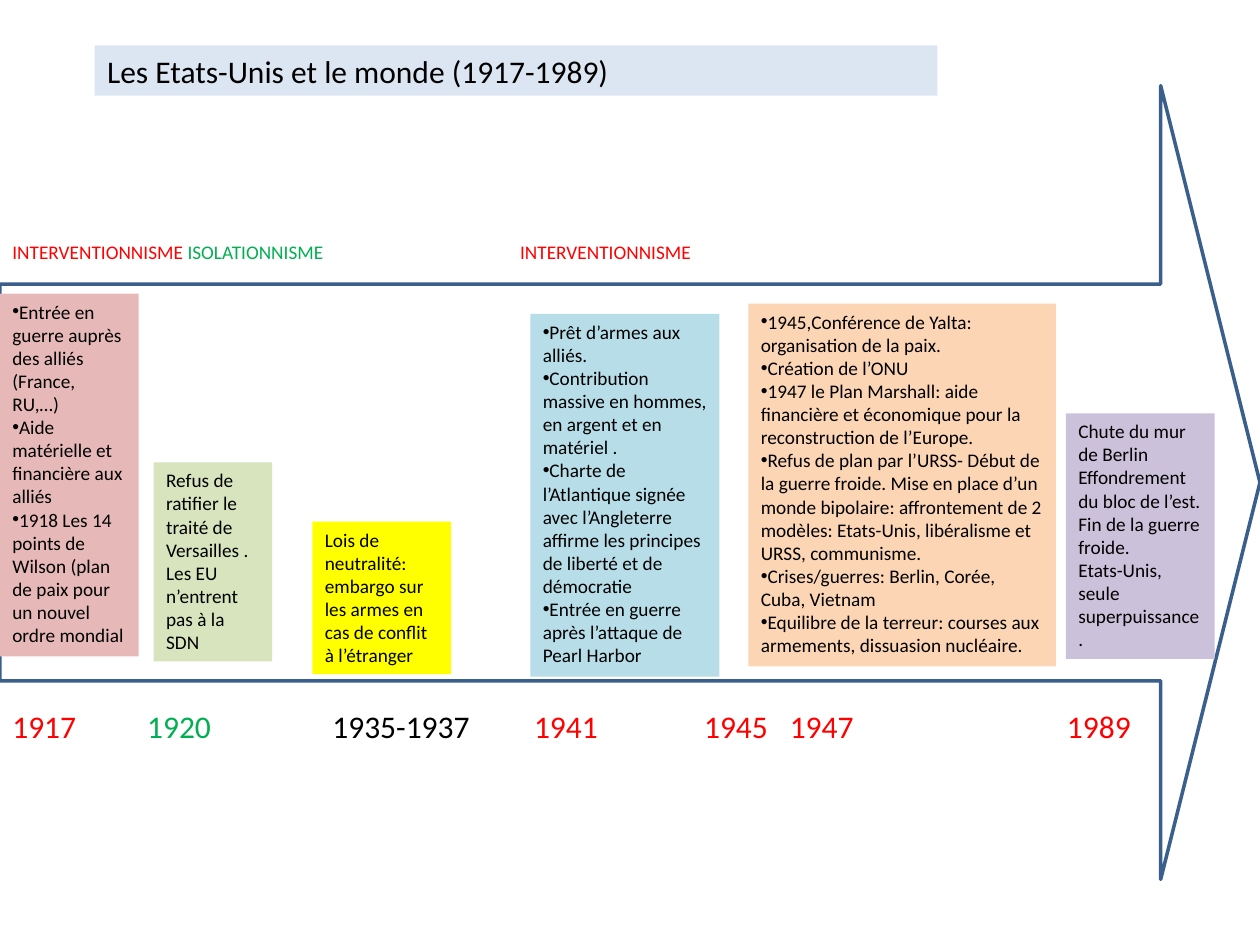
from lxml.etree import SubElement
from pptx import Presentation
from pptx.dml.color import RGBColor
from pptx.enum.shapes import MSO_SHAPE
from pptx.enum.text import MSO_ANCHOR, PP_ALIGN
from pptx.oxml.ns import qn
from pptx.util import Inches, Pt

FONT = "Calibri"
BLACK = RGBColor(0x00, 0x00, 0x00)
WHITE = RGBColor(0xFF, 0xFF, 0xFF)
RED = RGBColor(0xFF, 0x00, 0x00)
GREEN = RGBColor(0x00, 0xB0, 0x50)
ARROW_BLUE = RGBColor(0x3A, 0x5F, 0x8C)
TITLE_BLUE = RGBColor(0xDC, 0xE6, 0xF2)
PINK = RGBColor(0xE6, 0xB9, 0xB8)
OLIVE = RGBColor(0xD7, 0xE4, 0xBD)
YELLOW = RGBColor(0xFF, 0xFF, 0x00)
AQUA = RGBColor(0xB7, 0xDE, 0xE8)
ORANGE = RGBColor(0xFC, 0xD5, 0xB5)
PURPLE = RGBColor(0xCC, 0xC1, 0xDA)

# Box, fill, bulleted, paragraphs
EVENTS = [
    ((0, 2.33, 1.1, 2.88), PINK, True, [
        "Entrée en guerre auprès des alliés (France, RU,…)",
        "Aide matérielle et financière aux alliés",
        "1918 Les 14 points de Wilson (plan de paix pour un nouvel ordre mondial",
    ]),
    ((1.22, 3.67, 0.94, 1.58), OLIVE, False, [
        "Refus de ratifier le traité de Versailles .",
        "Les EU n’entrent pas à la SDN",
    ]),
    ((2.48, 4.14, 1.1, 1.21), YELLOW, False, [
        "Lois de neutralité: embargo sur les armes en cas de conflit à l’étranger",
    ]),
    ((4.21, 2.49, 1.5, 2.88), AQUA, True, [
        "Prêt d’armes aux alliés.",
        "Contribution massive en hommes, en argent et en matériel .",
        "Charte de l’Atlantique signée avec l’Angleterre affirme les principes "
        "de liberté et de démocratie",
        "Entrée en guerre après l’attaque de Pearl Harbor",
    ]),
    ((5.94, 2.41, 2.44, 2.88), ORANGE, True, [
        "1945,Conférence de Yalta: organisation de la paix.",
        "Création de l’ONU",
        "1947 le Plan Marshall: aide financière et économique pour la "
        "reconstruction de l’Europe.",
        "Refus de plan par l’URSS- Début de la guerre froide. Mise en place d’un "
        "monde bipolaire: affrontement de 2 modèles: Etats-Unis, libéralisme et "
        "URSS, communisme.",
        "Crises/guerres: Berlin, Corée, Cuba, Vietnam",
        "Equilibre de la terreur: courses aux armements, dissuasion nucléaire.",
    ]),
    ((8.46, 3.28, 1.18, 1.95), PURPLE, False, [
        "Chute du mur de Berlin",
        "Effondrement du bloc de l’est.",
        "Fin de la guerre froide.",
        "Etats-Unis, seule superpuissance.",
    ]),
]

# Text, colour, tab stop in inches (the first entry starts the line)
YEARS = [
    ("1917", RED, 0), ("1920", GREEN, 1.07), ("1935-1937", BLACK, 2.54),
    ("1941", RED, 4.14), ("1945", RED, 5.49), ("1947", RED, 6.17),
    ("1989", RED, 8.37),
]
POLICIES = [
    ("INTERVENTIONNISME", RED, 0), ("ISOLATIONNISME", GREEN, 1.39),
    ("INTERVENTIONNISME", RED, 4.03),
]


def add_run(p, text, size, color=BLACK):
    r = p.add_run()
    r.text = text
    r.font.name = FONT
    r.font.size = Pt(size)
    r.font.color.rgb = color


def add_title(s, text):
    sp = s.shapes.title
    sp.left, sp.top = Inches(0.75), Inches(0.36)
    sp.width, sp.height = Inches(6.69), Inches(0.4)
    sp.fill.solid()
    sp.fill.fore_color.rgb = TITLE_BLUE
    tf = sp.text_frame
    tf.vertical_anchor = MSO_ANCHOR.TOP
    p = tf.paragraphs[0]
    p.alignment = PP_ALIGN.LEFT
    add_run(p, text, 18)


def add_filled_shape(s, kind, box, fill):
    sp = s.shapes.add_shape(kind, *map(Inches, box))
    sp.shadow.inherit = False
    sp.fill.solid()
    sp.fill.fore_color.rgb = fill
    return sp


def add_time_arrow(s):
    sp = add_filled_shape(s, MSO_SHAPE.RIGHT_ARROW, (0, 0.68, 10, 6.3), WHITE)
    sp.adjustments[0] = 0.5
    sp.adjustments[1] = 0.125
    sp.line.color.rgb = ARROW_BLUE
    sp.line.width = Pt(2)


def add_event(s, box, fill, bulleted, lines):
    sp = add_filled_shape(s, MSO_SHAPE.RECTANGLE, box, fill)
    sp.line.fill.background()
    tf = sp.text_frame
    tf.word_wrap = True
    tf.vertical_anchor = MSO_ANCHOR.TOP
    for i, line in enumerate(lines):
        p = tf.add_paragraph() if i else tf.paragraphs[0]
        p.alignment = PP_ALIGN.LEFT
        if bulleted:
            pPr = p._p.get_or_add_pPr()
            SubElement(pPr, qn("a:buFont"), typeface="Arial")
            SubElement(pPr, qn("a:buChar"), char="•")
        add_run(p, line, 11)


def add_tabbed_line(s, box, entries, size):
    """One line of text whose entries sit at their own tab stops."""
    tf = s.shapes.add_textbox(*map(Inches, box)).text_frame
    tf.word_wrap = True
    p = tf.paragraphs[0]
    tabs = SubElement(p._p.get_or_add_pPr(), qn("a:tabLst"))
    for i, (text, color, stop) in enumerate(entries):
        if i:
            SubElement(tabs, qn("a:tab"), pos=str(Inches(stop)), algn="l")
            text = "\t" + text
        add_run(p, text, size, color)


def main():
    prs = Presentation()
    prs.slide_width, prs.slide_height = Inches(10), Inches(7.5)
    s = prs.slides.add_slide(prs.slide_layouts[5])
    add_title(s, "Les Etats-Unis et le monde (1917-1989)")
    add_time_arrow(s)
    add_tabbed_line(s, (0, 5.56, 10, 0.4), YEARS, 18)
    add_tabbed_line(s, (0, 1.86, 9.17, 0.29), POLICIES, 11)
    for event in EVENTS:
        add_event(s, *event)
    prs.save("out.pptx")


if __name__ == "__main__":
    main()
